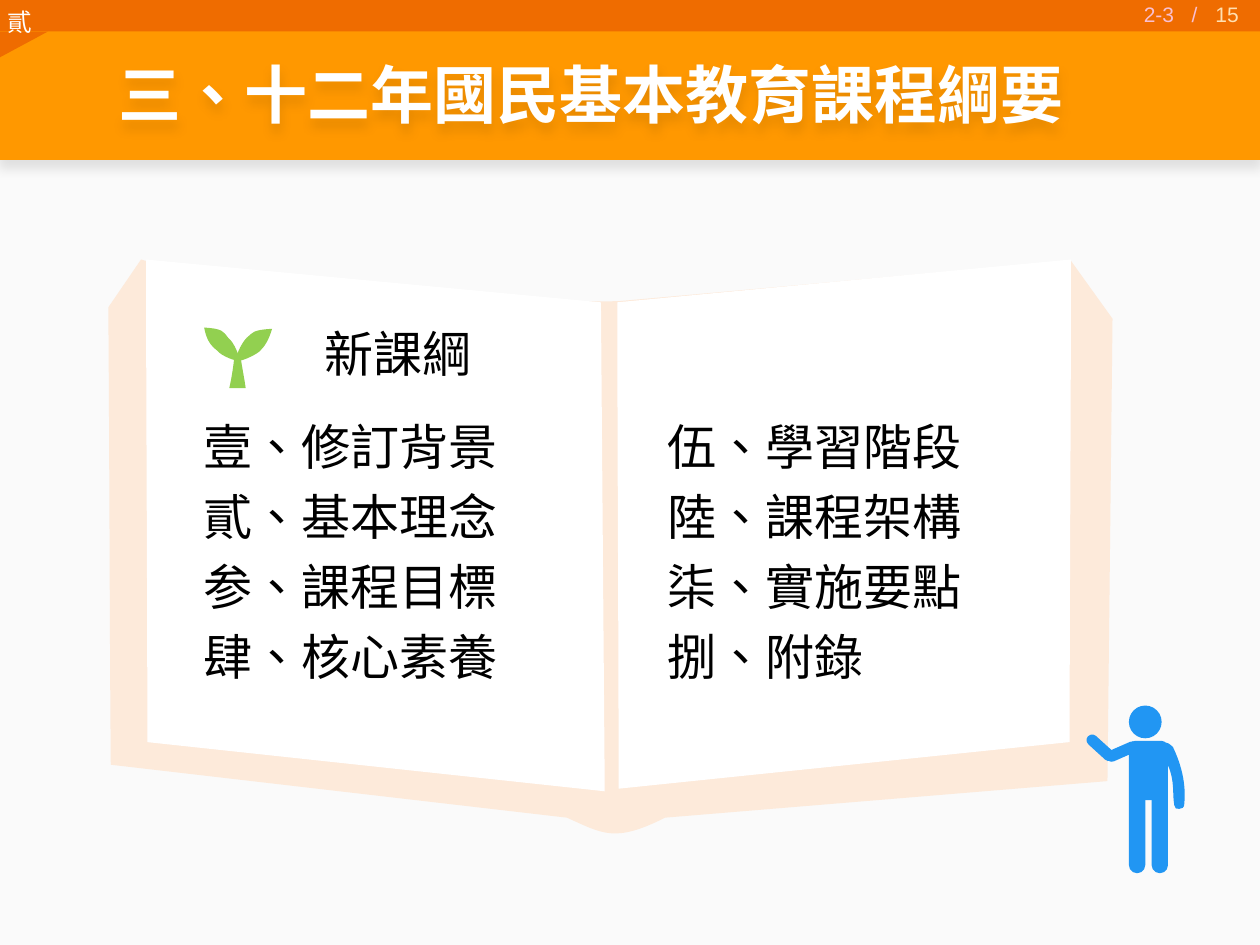
from lxml import etree
from pptx import Presentation
from pptx.dml.color import RGBColor
from pptx.enum.shapes import MSO_SHAPE
from pptx.enum.text import MSO_ANCHOR, PP_ALIGN
from pptx.oxml.ns import qn
from pptx.util import Inches, Pt

RECT, ROUND, OVAL = MSO_SHAPE.RECTANGLE, MSO_SHAPE.ROUNDED_RECTANGLE, MSO_SHAPE.FLOWCHART_CONNECTOR
TOP, MIDDLE = MSO_ANCHOR.TOP, MSO_ANCHOR.MIDDLE
LEFT, RIGHT = PP_ALIGN.LEFT, PP_ALIGN.RIGHT
BLACK, WHITE = RGBColor(0, 0, 0), RGBColor(255, 255, 255)
PAPER = RGBColor(0xFA, 0xFA, 0xFA)
ORANGE = RGBColor(0xFF, 0x98, 0x00)
DARK_ORANGE = RGBColor(0xEF, 0x6C, 0x00)
CREAM = RGBColor(0xFF, 0xE0, 0xB2)
PINK = RGBColor(0xF9, 0xBF, 0xD2)
COVER = RGBColor(0xFD, 0xEA, 0xDA)
GREEN = RGBColor(0x92, 0xD0, 0x50)
BLUE = RGBColor(0x21, 0x96, 0xF3)
CJK, LATIN = "Noto Sans CJK SC", "Arial"

# Content
TITLE = "三、十二年國民基本教育課程綱要"
SECTION = "貳"
HEADING = "新課綱"
CHAPTERS = [
    ["壹、修訂背景", "貳、基本理念", "参、課程目標", "肆、核心素養"],
    ["伍、學習階段", "陸、課程架構", "柒、實施要點", "捌、附錄"],
]

# Outlines: a start point, then line ends (x, y) or curves (x1, y1, x2, y2, x, y)
CORNER = [(-0.01, 0.25), (-0.01, 0.46), (0.38, 0.25)]
BOOK = [
    (COVER, [(1.12, 2.06), (0.86, 2.44), (0.87, 3.65, 0.87, 4.87, 0.88, 6.07), (4.5, 6.49),
             (4.79, 6.62, 4.88, 6.69, 5.28, 6.49), (8.79, 6.2), (8.83, 2.53),
             (8.5, 2.07), (4.92, 2.39), (4.65, 2.4, 2.9, 2.4, 1.87, 2.28)]),
    (WHITE, [(4.91, 6.26), (4.91, 4.97, 4.9, 3.68, 4.9, 2.4), (8.5, 2.06),
             (8.5, 3.33, 8.49, 4.61, 8.49, 5.89)]),
    (WHITE, [(4.8, 6.28), (4.77, 2.4), (1.16, 2.06), (1.16, 3.33, 1.17, 4.61, 1.17, 5.89)]),
]
SPROUT = [
    [(1.89, 2.86), (1.91, 2.84, 1.86, 2.72, 1.81, 2.68), (1.77, 2.63, 1.77, 2.61, 1.62, 2.6),
     (1.64, 2.7, 1.67, 2.74, 1.72, 2.78), (1.76, 2.83, 1.88, 2.87, 1.89, 2.86)],
    [(1.86, 2.82), (1.91, 2.82), (1.91, 2.86, 1.94, 3, 1.95, 3.08), (1.82, 3.08),
     (1.84, 3, 1.86, 2.86, 1.86, 2.82)],
    [(1.88, 2.86), (1.86, 2.85, 1.91, 2.73, 1.96, 2.68), (2.01, 2.64, 2, 2.62, 2.16, 2.61),
     (2.13, 2.71, 2.1, 2.75, 2.06, 2.79), (2.01, 2.83, 1.89, 2.88, 1.88, 2.86)],
]
RIGHT_ARM = [(9.21, 5.97), (9.2, 5.93, 9.21, 5.9, 9.23, 5.9), (9.26, 5.88, 9.29, 5.91, 9.31, 5.93),
             (9.43, 6.18, 9.4, 6.36, 9.4, 6.38), (9.4, 6.41, 9.38, 6.42, 9.36, 6.42),
             (9.34, 6.43, 9.32, 6.41, 9.32, 6.39), (9.3, 6.28, 9.34, 6.15, 9.21, 5.97)]
# Each outline keeps its own turn: sprout leaves lean outwards
SPROUT_TURNS = [34.9, 0, 325.1]
ARM_TURN = 355.8
# Speaker parts: shape, box, corner rounding, rotation
SPEAKER = [
    (OVAL, (8.96, 5.6, 0.26, 0.26), None, 0),
    (ROUND, (8.96, 5.88, 0.31, 0.47), 0.17, 0),
    (ROUND, (9.14, 6.24, 0.13, 0.69), 0.5, 0),
    (ROUND, (8.96, 6.24, 0.13, 0.69), 0.5, 0),
    (ROUND, (8.69, 5.8, 0.09, 0.27), 0.5, 312.3),
    (ROUND, (8.86, 5.83, 0.09, 0.27), 0.5, 66.4),
]


def paint(sp, color):
    sp.shadow.inherit = False
    sp.fill.solid()
    sp.fill.fore_color.rgb = color
    sp.line.fill.background()


def add_block(s, kind, box, color, rounding=None, rotation=0):
    sp = s.shapes.add_shape(kind, *map(Inches, box))
    paint(sp, color)
    if rounding is not None:
        sp.adjustments[0] = rounding
    sp.rotation = rotation
    return sp


def add_outline(s, steps, color):
    points = [(Inches(step[i]), Inches(step[i + 1]))
              for step in steps for i in range(0, len(step), 2)]
    builder = s.shapes.build_freeform(*points[0])
    builder.add_line_segments(points[1:], close=True)
    sp = builder.convert_to_shape()
    paint(sp, color)
    # Join the three points of each curve into one Bezier segment
    segments = iter(list(sp._element.iter(qn("a:lnTo"))))
    for step in steps[1:]:
        segment = next(segments)
        if len(step) == 6:
            segment.tag = qn("a:cubicBezTo")
            for extra in (next(segments), next(segments)):
                segment.append(extra[0])
                extra.getparent().remove(extra)


def add_shadow(sp, percent):
    sp.shadow.inherit = False
    effects = sp._element.spPr.find(qn("a:effectLst"))
    shadow = etree.SubElement(effects, qn("a:outerShdw"), blurRad=str(Pt(6)), dist=str(Pt(4)),
                              dir="5400000", algn="t", rotWithShape="0")
    color = etree.SubElement(shadow, qn("a:srgbClr"), val="000000")
    etree.SubElement(color, qn("a:alpha"), val=str(percent * 1000))


def add_text(s, box, lines, size, color, font=CJK, bold=False, anchor=TOP, align=LEFT,
             spacing=None, wrap=True, tab=None):
    sp = s.shapes.add_textbox(*map(Inches, box))
    tf = sp.text_frame
    tf.word_wrap = wrap
    tf.vertical_anchor = anchor
    for i, line in enumerate(lines):
        p = tf.paragraphs[0] if i == 0 else tf.add_paragraph()
        p.text = line
        p.alignment = align
        if spacing:
            p.line_spacing = Pt(spacing)
        if tab:
            stops = etree.SubElement(p._p.get_or_add_pPr(), qn("a:tabLst"))
            etree.SubElement(stops, qn("a:tab"), pos=str(Inches(tab)), algn="l")
        p.font.size, p.font.bold, p.font.name = Pt(size), bold, font
        p.font.color.rgb = color
        # East Asian typeface, and the language that centres its punctuation
        defaults = p._p.pPr.find(qn("a:defRPr"))
        etree.SubElement(defaults, qn("a:ea"), typeface=font)
        if font == CJK:
            for r in p.runs:
                r._r.get_or_add_rPr().set("lang", "zh-TW")
    return sp


def main():
    prs = Presentation()
    prs.slide_width, prs.slide_height = Inches(10), Inches(7.5)
    s = prs.slides.add_slide(prs.slide_layouts[6])

    # Background and header
    add_block(s, RECT, (0, 0.44, 10, 7.06), PAPER)
    add_shadow(add_block(s, ROUND, (-0.01, 0, 10.01, 1.27), ORANGE, 0), 10)
    add_block(s, ROUND, (-0.01, -0.02, 10.01, 0.27), DARK_ORANGE, 0)
    add_outline(s, CORNER, DARK_ORANGE)
    add_text(s, (-0.04, 0.01, 0.4, 0.34), [SECTION], 14, WHITE, wrap=False)
    add_text(s, (7.6, -0.09, 2.33, 0.4), ["15"], 12, CREAM, LATIN, anchor=MIDDLE, align=RIGHT)

    # Open book with its two pages of chapters
    for color, outline in BOOK:
        add_outline(s, outline, color)
    for column, chapters in enumerate(CHAPTERS):
        add_text(s, (1.52 + 3.68 * column, 3.17, 3.58, 2.29), chapters, 28, BLACK, spacing=40)
    add_text(s, (2.48, 2.52, 1.87, 0.57), [HEADING], 28, BLACK)
    for outline in SPROUT:
        add_outline(s, outline, GREEN)

    # Title
    title = add_text(s, (0.84, 0.21, 9.16, 1.06), [TITLE], 36, WHITE, bold=True, anchor=MIDDLE)
    add_shadow(title, 10)

    # Speaker
    for kind, box, rounding, rotation in SPEAKER:
        add_block(s, kind, box, BLUE, rounding, rotation)
    add_outline(s, RIGHT_ARM, BLUE)

    # Page label
    add_text(s, (8.98, -0.04, 0.67, 0.3), ["2-3\t/"], 12, PINK, LATIN, tab=0.38)
    prs.save("out.pptx")


if __name__ == "__main__":
    main()
